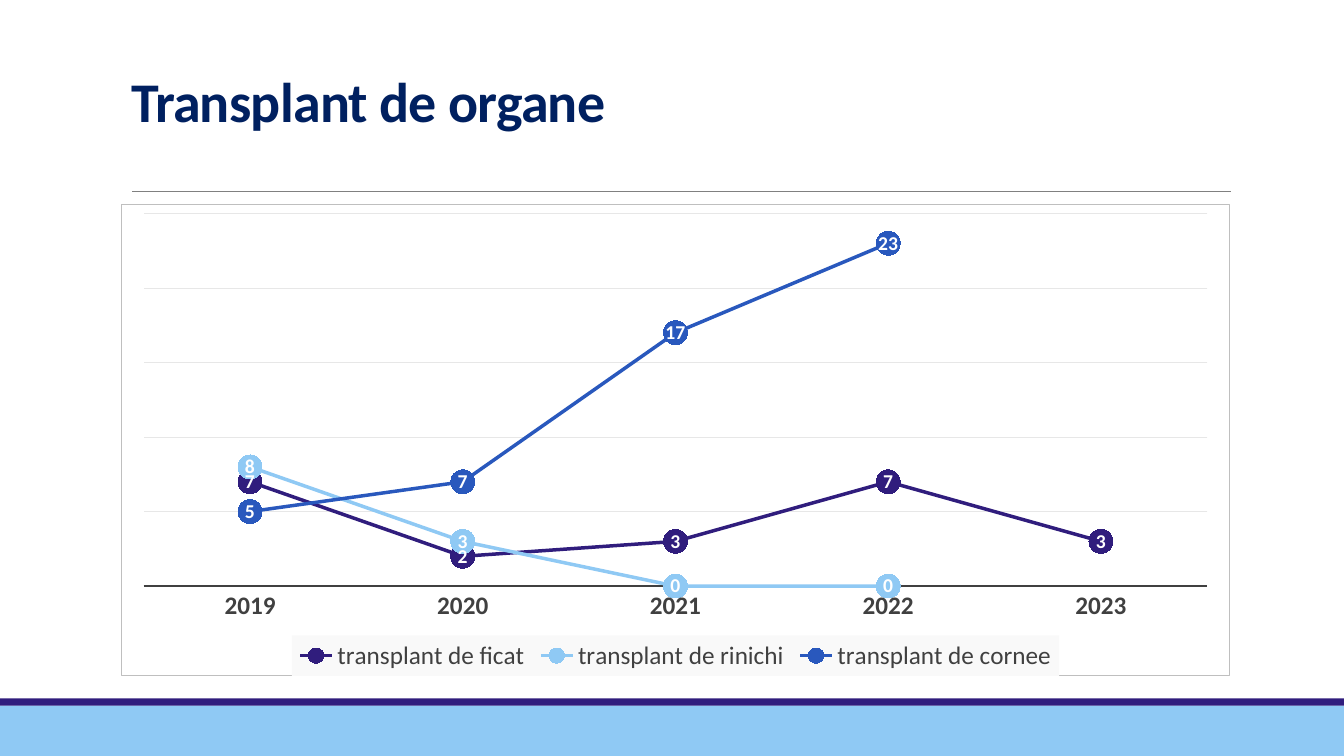
from dataclasses import dataclass

from lxml import etree
from pptx import Presentation
from pptx import util as u
from pptx.chart.chart import Chart
from pptx.chart.data import CategoryChartData
from pptx.chart.series import LineSeries
from pptx.dml.color import RGBColor
from pptx.enum import chart as charts, shapes, text
from pptx.oxml import parse_xml
from pptx.oxml.ns import nsdecls, qn
from pptx.slide import Slide
from pptx.text.text import Font


@dataclass(frozen=True)
class Theme:
    font: str = "Calibri"
    title: str = "002060"
    purple: str = "301D7D"
    sky: str = "8FC9F4"
    blue: str = "2958BD"
    text: str = "404040"
    rule: str = "808080"
    border: str = "BFBFBF"
    grid: str = "E7E7E7"
    legend: str = "F9F9F9"
    white: str = "FFFFFF"
    title_size: int = 40
    axis_size: int = 18
    label_size: int = 14
    marker_size: int = 17


@dataclass(frozen=True)
class Band:
    top: float
    height: float
    color: str


@dataclass(frozen=True)
class Transplant:
    name: str
    values: tuple[int | None, ...]
    color: str


THEME = Theme()
SLIDE_WIDTH, SLIDE_HEIGHT = 13.33, 7.5
YEARS = ("2019", "2020", "2021", "2022", "2023")
BANDS = (Band(7, 0.5, THEME.sky), Band(6.93, 0.07, THEME.purple))
TRANSPLANTS = (
    Transplant("transplant de ficat", (7, 2, 3, 7, 3), THEME.purple),
    Transplant("transplant de rinichi", (8, 3, 0, 0, None), THEME.sky),
    Transplant("transplant de cornee", (5, 7, 17, 23, None), THEME.blue),
)
PLOT_LAYOUT = {"x": 0.02, "y": 0.02, "w": 0.96, "h": 0.79}


def rgb(color: str) -> RGBColor:
    return RGBColor.from_string(color)


def style_font(font: Font, size: int, color: str, bold: bool = False) -> None:
    font.name = THEME.font
    font.size = u.Pt(size)
    font.bold = bold
    font.color.rgb = rgb(color)


def add_title(slide: Slide, wording: str) -> None:
    title = slide.shapes.title
    title.left, title.top = u.Inches(1.2), u.Inches(0.31)
    title.width, title.height = u.Inches(11), u.Inches(1.07)
    frame = title.text_frame
    frame.text = wording
    frame.vertical_anchor = text.MSO_ANCHOR.BOTTOM
    paragraph = frame.paragraphs[0]
    paragraph.alignment = text.PP_ALIGN.LEFT
    paragraph.line_spacing = 0.85
    run = paragraph.runs[0]
    style_font(run.font, THEME.title_size, THEME.title, bold=True)
    run.font._element.set("spc", "-50")


def add_band(slide: Slide, band: Band) -> None:
    shape = slide.shapes.add_shape(
        shapes.MSO_SHAPE.RECTANGLE, 0, u.Inches(band.top),
        u.Inches(SLIDE_WIDTH), u.Inches(band.height))
    shape.shadow.inherit = False
    shape.fill.solid()
    shape.fill.fore_color.rgb = rgb(band.color)
    shape.line.fill.background()


def add_rule(slide: Slide) -> None:
    rule = slide.shapes.add_connector(
        shapes.MSO_CONNECTOR.STRAIGHT,
        u.Inches(1.31), u.Inches(1.9), u.Inches(12.21), u.Inches(1.9))
    rule.line.color.rgb = rgb(THEME.rule)
    rule.line.width = u.Pt(0.5)
    etree.SubElement(rule._element.spPr, qn("a:effectLst"))


def area_format(fill: str, border: str | None = None) -> etree._Element:
    outline = "<a:ln><a:noFill/></a:ln>"
    if border:
        outline = (f'<a:ln w="{u.Pt(0.75)}"><a:solidFill><a:srgbClr val="{border}"/>'
                   "</a:solidFill></a:ln>")
    return parse_xml(
        f'<c:spPr {nsdecls("c", "a")}><a:solidFill><a:srgbClr val="{fill}"/>'
        f"</a:solidFill>{outline}</c:spPr>")


def place_plot(chart: Chart) -> None:
    plot_area = chart._chartSpace.chart.plotArea
    for layout in plot_area.findall(qn("c:layout")):
        plot_area.remove(layout)
    modes = '<c:xMode val="edge"/><c:yMode val="edge"/>'
    sizes = "".join(f'<c:{key} val="{value}"/>' for key, value in PLOT_LAYOUT.items())
    plot_area.insert(0, parse_xml(
        f'<c:layout {nsdecls("c")}><c:manualLayout><c:layoutTarget val="inner"/>'
        f"{modes}{sizes}</c:manualLayout></c:layout>"))


def style_series(series: LineSeries, color: str) -> None:
    series.smooth = False
    series.format.line.color.rgb = rgb(color)
    series.format.line.width = u.Pt(2.5)
    marker = series.marker
    marker.style = charts.XL_MARKER_STYLE.CIRCLE
    marker.size = THEME.marker_size
    marker.format.fill.solid()
    marker.format.fill.fore_color.rgb = rgb(color)
    marker.format.line.fill.background()
    labels = series.data_labels
    labels.show_value = True
    labels.position = charts.XL_LABEL_POSITION.CENTER
    style_font(labels.font, THEME.label_size, THEME.white, bold=True)


def style_axes(chart: Chart) -> None:
    years = chart.category_axis
    years.major_tick_mark = charts.XL_TICK_MARK.NONE
    years.minor_tick_mark = charts.XL_TICK_MARK.NONE
    years.format.line.color.rgb = rgb(THEME.text)
    years.format.line.width = u.Pt(1.5)
    style_font(years.tick_labels.font, THEME.axis_size, THEME.text, bold=True)
    counts = chart.value_axis
    counts.minimum_scale, counts.maximum_scale, counts.major_unit = 0, 25, 5
    counts.has_major_gridlines = True
    counts.major_gridlines.format.line.color.rgb = rgb(THEME.grid)
    counts.major_gridlines.format.line.width = u.Pt(0.75)
    counts.visible = False


def style_legend(chart: Chart) -> None:
    chart.has_legend = True
    legend = chart.legend
    legend.position = charts.XL_LEGEND_POSITION.BOTTOM
    legend.include_in_layout = False
    style_font(legend.font, THEME.axis_size, THEME.text)
    overlay = legend._element.find(qn("c:overlay"))
    overlay.addnext(area_format(THEME.legend))


def add_transplant_chart(slide: Slide) -> None:
    chart_data = CategoryChartData()
    chart_data.categories = YEARS
    for transplant in TRANSPLANTS:
        chart_data.add_series(transplant.name, transplant.values)
    chart = slide.shapes.add_chart(
        charts.XL_CHART_TYPE.LINE_MARKERS, u.Inches(1.2), u.Inches(2.02),
        u.Inches(11), u.Inches(4.69), chart_data).chart
    chart.has_title = False
    style_font(chart.font, 10, "000000")
    chart.plots[0].vary_by_categories = False
    for series, transplant in zip(chart.plots[0].series, TRANSPLANTS):
        style_series(series, transplant.color)
    style_axes(chart)
    style_legend(chart)
    place_plot(chart)
    chart._chartSpace.chart.addnext(area_format(THEME.white, THEME.border))


def main() -> None:
    presentation = Presentation()
    presentation.slide_width = u.Inches(SLIDE_WIDTH)
    presentation.slide_height = u.Inches(SLIDE_HEIGHT)
    slide = presentation.slides.add_slide(presentation.slide_layouts[5])
    for band in BANDS:
        add_band(slide, band)
    add_rule(slide)
    add_title(slide, "Transplant de organe")
    add_transplant_chart(slide)
    presentation.save("out.pptx")


if __name__ == "__main__":
    main()
